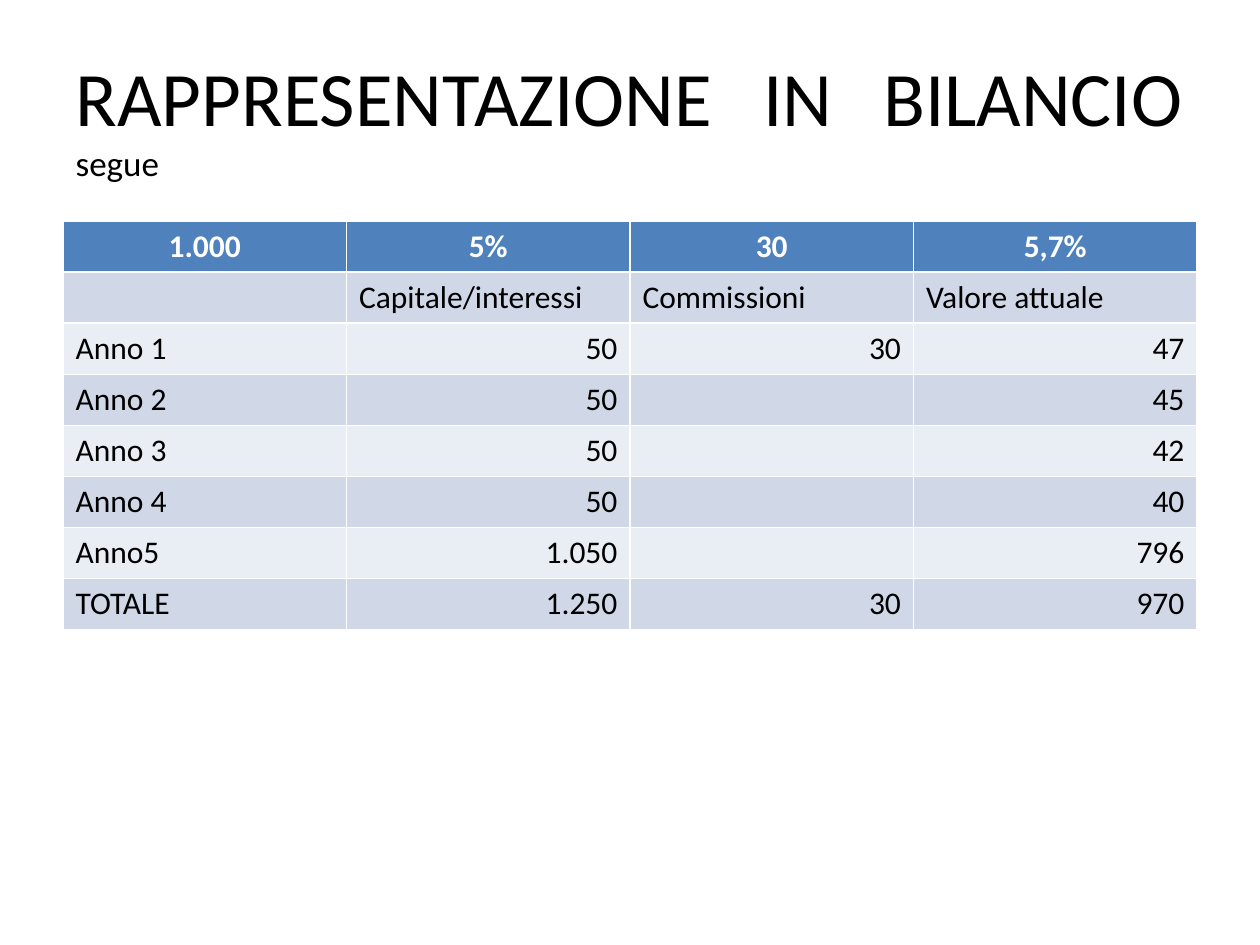
from pptx import Presentation
from pptx.dml.color import RGBColor
from pptx.enum.text import MSO_ANCHOR, MSO_AUTO_SIZE, PP_ALIGN
from pptx.util import Emu, Pt

LEFT, CENTER, RIGHT = PP_ALIGN.LEFT, PP_ALIGN.CENTER, PP_ALIGN.RIGHT
JUSTIFY = PP_ALIGN.JUSTIFY
MIDDLE = MSO_ANCHOR.MIDDLE
NO_FIT = MSO_AUTO_SIZE.NONE
TITLE_ONLY = 5
PX_PER_INCH = 126
COLORS = {
    "text": "000000",
    "header text": "FFFFFF",
    "header": "4F81BD",
    "dark band": "D0D8E8",
    "light band": "E9EDF4",
}
ROWS = [
    ["1.000", "5%", "30", "5,7%"],
    ["", "Capitale/interessi", "Commissioni", "Valore attuale"],
    ["Anno 1", "50", "30", "47"],
    ["Anno 2", "50", "", "45"],
    ["Anno 3", "50", "", "42"],
    ["Anno 4", "50", "", "40"],
    ["Anno5", "1.050", "", "796"],
    ["TOTALE", "1.250", "30", "970"],
]


def px(length):
    return Emu(round(length * 914400 / PX_PER_INCH))


def add_span(para, text, size, color, bold=False):
    span = para.add_run()
    span.text = text
    font_format = {"name": "Calibri", "size": Pt(size), "bold": bold}
    for name, value in font_format.items():
        setattr(span.font, name, value)
    span.font.color.rgb = RGBColor.from_string(COLORS[color])


deck = Presentation()
deck.slide_width, deck.slide_height = px(1260), px(945)
page = deck.slides.add_slide(deck.slide_layouts[TITLE_ONLY])

# Title
title = page.shapes.title
title_box = {"left": px(63), "top": px(38), "width": px(1134), "height": px(157)}
for name, value in title_box.items():
    setattr(title, name, value)
frame_format = {"word_wrap": True, "auto_size": NO_FIT, "vertical_anchor": MIDDLE}
for name, value in frame_format.items():
    setattr(title.text_frame, name, value)
para = title.text_frame.paragraphs[0]
para.alignment = JUSTIFY
add_span(para, "RAPPRESENTAZIONE IN BILANCIO", 44, "text")
para.add_line_break()
add_span(para, "segue", 20, "text")

# Repayment table; the default table style draws the white borders
table = page.shapes.add_table(
    len(ROWS), len(ROWS[0]), px(63), px(221), px(1134), px(408)
).table
for row, values in enumerate(ROWS):
    is_header = row == 0
    band = "header" if is_header else "dark band" if row % 2 else "light band"
    for column, value in enumerate(values):
        cell = table.cell(row, column)
        cell.fill.solid()
        cell.fill.fore_color.rgb = RGBColor.from_string(COLORS[band])
        if not value:
            continue
        para = cell.text_frame.paragraphs[0]
        if is_header:
            para.alignment = CENTER
        else:
            para.alignment = LEFT if row == 1 or column == 0 else RIGHT
        add_span(para, value, 18, "header text" if is_header else "text", is_header)

deck.save("out.pptx")
